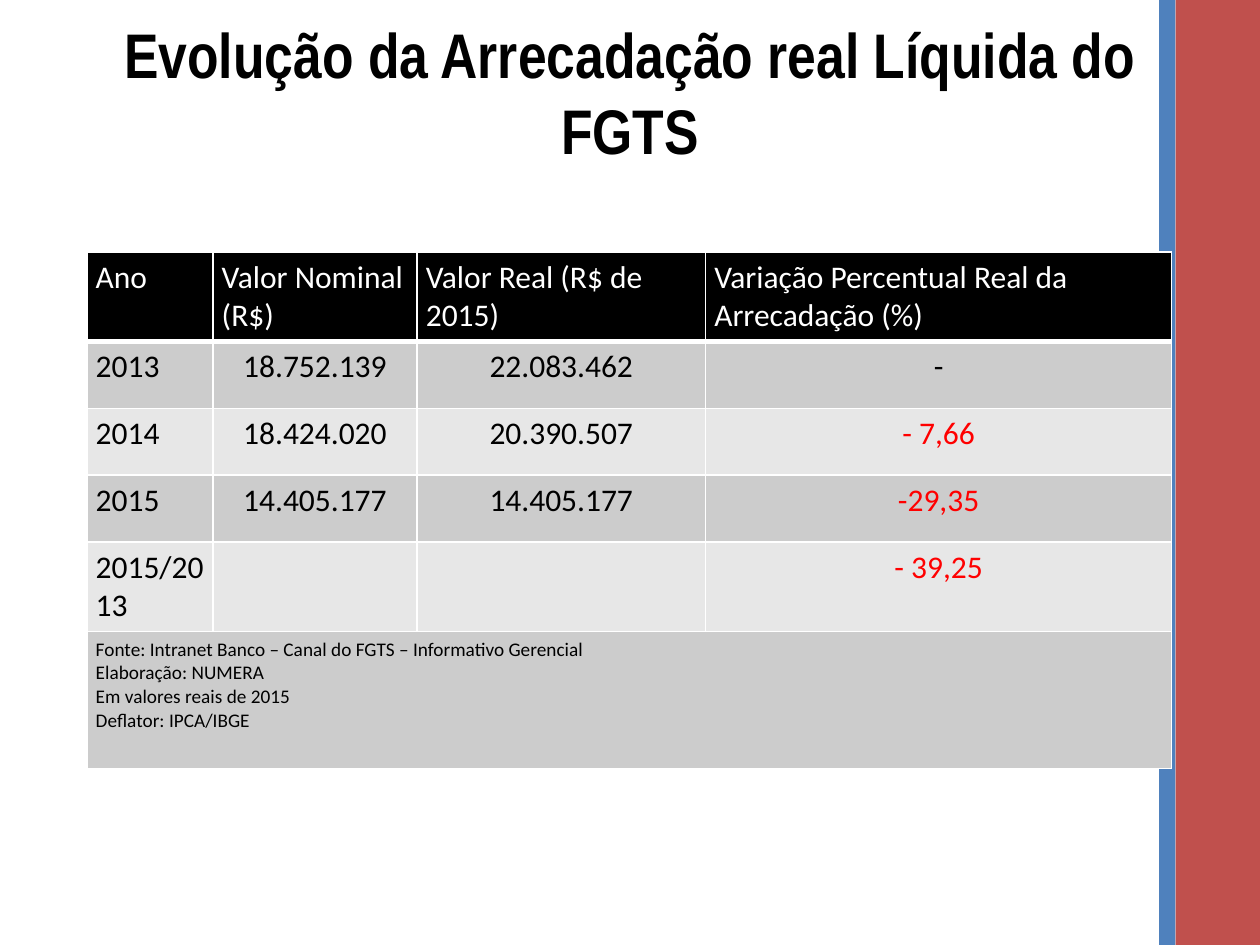
from lxml import etree
from pptx import Presentation
from pptx import util as u
from pptx.dml.color import RGBColor
from pptx.enum import shapes, text
from pptx.oxml import ns

BLACK, WHITE, RED = "000000", "FFFFFF", "FF0000"
DARK, LIGHT = "CCCCCC", "E7E7E7"
LEFT, CENTER = text.PP_ALIGN.LEFT, text.PP_ALIGN.CENTER

HEADS = ["Ano", "Valor Nominal (R$)", "Valor Real (R$ de 2015)",
         "Variação Percentual Real da Arrecadação (%)"]
YEARS = [
    ["2013", "18.752.139", "22.083.462", "-"],
    ["2014", "18.424.020", "20.390.507", "- 7,66"],
    ["2015", "14.405.177", "14.405.177", "-29,35"],
    ["2015/2013", "", "", "- 39,25"],
]
NOTES = ["Fonte: Intranet Banco – Canal do FGTS – Informativo Gerencial",
         "Elaboração: NUMERA", "Em valores reais de 2015",
         "Deflator: IPCA/IBGE"]


def color(code):
    return RGBColor.from_string(code)


def assign(item, values):
    for name, value in values.items():
        setattr(item, name, value)


class Deck:
    font = "Calibri"
    head = "Arial Narrow"

    def __init__(self, show):
        self.slide = show.slides.add_slide(show.slide_layouts[5])

    def label(self, frame, lines, tint, size=18, align=LEFT, font=None, bold=False):
        for i, line in enumerate(lines):
            para = frame.add_paragraph() if i else frame.paragraphs[0]
            para.alignment = align
            form = {"name": font or self.font, "size": u.Pt(size), "bold": bold}
            if line:
                run = para.add_run()
                run.text = line
                target = run.font
                target.color.rgb = color(tint)
            else:
                target = para.font
            assign(target, form)

    def bar(self, left, width, tint):
        box = self.slide.shapes.add_shape(
            shapes.MSO_SHAPE.RECTANGLE, u.Inches(left), 0,
            u.Inches(width), u.Inches(7.5))
        box.shadow.inherit = False
        box.fill.solid()
        box.fill.fore_color.rgb = color(tint)
        box.line.fill.background()

    def title(self, words):
        box = self.slide.shapes.title
        assign(box, {"left": u.Inches(0.69), "top": 0,
                     "width": u.Inches(8.62), "height": u.Inches(1.45)})
        frame = box.text_frame
        assign(frame, {"word_wrap": True, "auto_size": text.MSO_AUTO_SIZE.NONE,
                       "vertical_anchor": text.MSO_ANCHOR.MIDDLE})
        self.label(frame, [words], BLACK, 36, CENTER, self.head, True)
        box.element.getparent().append(box.element)

    def grid(self, left, top, cols, rows):
        frame = self.slide.shapes.add_table(
            len(rows), len(cols), u.Inches(left), u.Inches(top),
            u.Inches(sum(cols)), u.Inches(sum(rows)))
        table = frame.table
        for col, width in zip(table.columns, cols):
            col.width = u.Inches(width)
        for row, height in zip(table.rows, rows):
            row.height = u.Inches(height)
        return table

    def cell(self, cell, lines, fill, base=1, **form):
        assign(cell, {"margin_left": u.Inches(0.07), "margin_right": u.Inches(0.07),
                      "margin_top": u.Inches(0.05), "margin_bottom": u.Inches(0.05)})
        self.label(cell.text_frame, lines, **form)
        props = cell._tc.get_or_add_tcPr()
        for side, width in zip("LRTB", (1, 1, 1, base)):
            line = etree.SubElement(props, ns.qn("a:ln" + side), w=str(u.Pt(width)))
            solid = etree.SubElement(line, ns.qn("a:solidFill"))
            etree.SubElement(solid, ns.qn("a:srgbClr"), val=WHITE)
        cell.fill.solid()
        cell.fill.fore_color.rgb = color(fill)


def main():
    show = Presentation()
    assign(show, {"slide_width": u.Inches(10), "slide_height": u.Inches(7.5)})
    deck = Deck(show)
    deck.bar(9.2, 0.13, "4F81BD")
    deck.bar(9.33, 0.67, "C0504D")
    deck.title("Evolução da Arrecadação real Líquida do FGTS")

    table = deck.grid(0.69, 2, [1, 1.62, 2.29, 3.7], [0.53] * 5 + [1.09])
    for c, word in enumerate(HEADS):
        deck.cell(table.cell(0, c), [word], BLACK, base=3, tint=WHITE)
    for r, year in enumerate(YEARS, 1):
        for c, word in enumerate(year):
            deck.cell(table.cell(r, c), [word], DARK if r % 2 else LIGHT,
                      tint=RED if c == 3 and r > 1 else BLACK,
                      align=CENTER if c else LEFT)
    foot = table.cell(5, 0)
    foot.merge(table.cell(5, 3))
    deck.cell(foot, NOTES, DARK, tint=BLACK, size=11)
    show.save("out.pptx")


if __name__ == "__main__":
    main()
